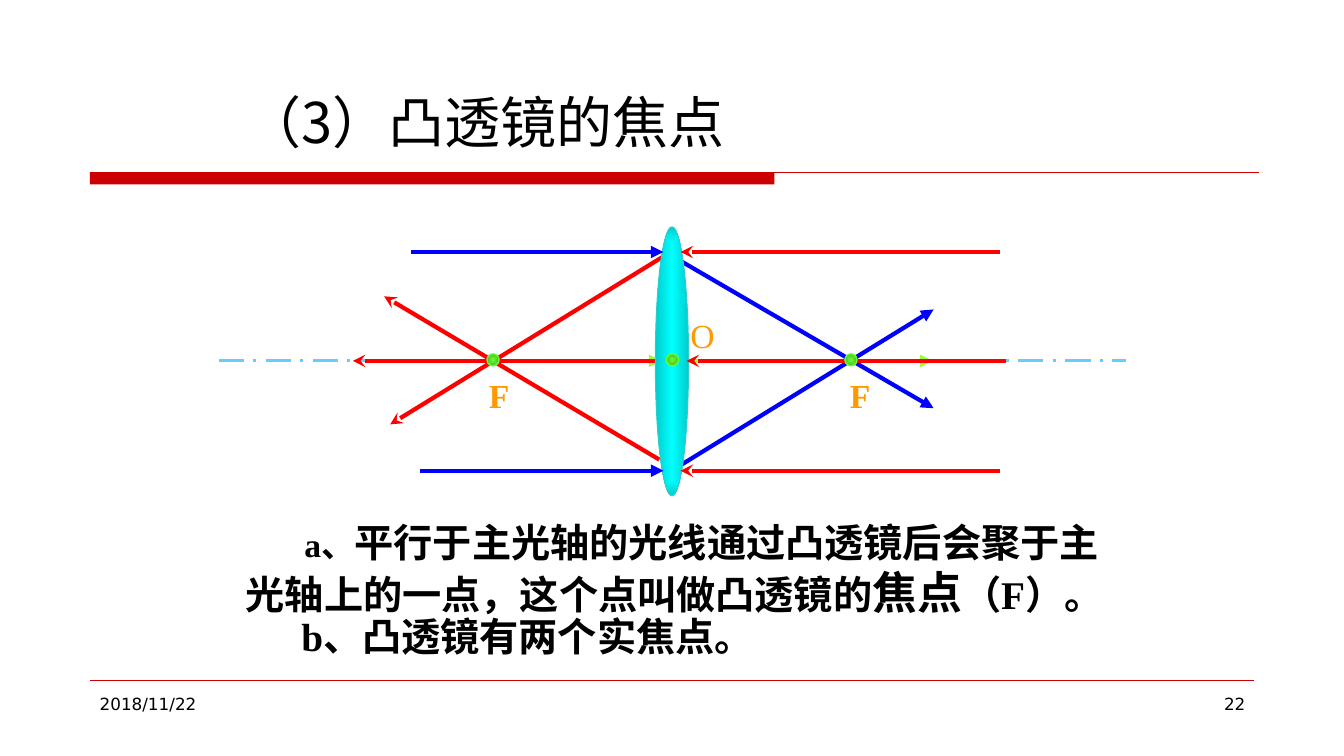
"""Slide on the focal points of a convex lens."""
from lxml.etree import SubElement
from pptx import Presentation
from pptx.dml.color import RGBColor
from pptx.enum.dml import MSO_LINE as DASH
from pptx.enum.shapes import MSO_CONNECTOR as CON, MSO_SHAPE as SHAPE
from pptx.enum.text import MSO_ANCHOR as ANCHOR, PP_ALIGN as ALIGN
from pptx.oxml.ns import qn
from pptx.util import Pt

PX = 9144
BLACK = RGBColor(0, 0, 0)
CRIMSON = RGBColor(0xCC, 0, 0)
RED = RGBColor(0xFF, 0, 0)
BLUE = RGBColor(0, 0, 0xFF)
SKY = RGBColor(0x66, 0xCC, 0xFF)
LIME = RGBColor(0x99, 0xFF, 0x33)
ORANGE = RGBColor(0xFF, 0x99, 0)
CYAN = RGBColor(0, 0xFF, 0xFF)
TEAL = RGBColor(0, 0xCC, 0xCC)
RIM = RGBColor(0x33, 0xCC, 0xCC)
GREEN = RGBColor(0x66, 0xFF, 0x33)
MOSS = RGBColor(0x49, 0xB6, 0x24)
SERIF, SANS, HAN = "Times New Roman", "DejaVu Sans", "Noto Sans CJK SC"

deck = Presentation()
deck.slide_width, deck.slide_height = 1333 * PX, 750 * PX
slide = deck.slides.add_slide(deck.slide_layouts[6])
shapes = slide.shapes


def write(box, paras, font=SERIF, color=BLACK, bold=False,
          align=ALIGN.LEFT, anchor=ANCHOR.TOP, wrap=True, indent=0):
    """Add a text box; each paragraph is a list of (text, size) runs."""
    frame = shapes.add_textbox(*[n * PX for n in box]).text_frame
    frame.word_wrap, frame.vertical_anchor = wrap, anchor
    for i, runs in enumerate(paras):
        para = frame.add_paragraph() if i else frame.paragraphs[0]
        para.alignment = align
        if indent and not i:
            para._p.get_or_add_pPr().set("indent", str(indent * PX))
        for text, size in runs:
            run = para.add_run()
            run.text = text
            face = run.font
            face.name, face.size, face.bold = font, Pt(size), bold
            face.color.rgb = color
            SubElement(run._r.rPr, qn("a:ea"), typeface=HAN)


def draw(ends, color, width=3, tip=None, dash=None):
    """Draw a straight line, with an arrowhead if a tip is named."""
    line = shapes.add_connector(CON.STRAIGHT, *[n * PX for n in ends])
    line.line.color.rgb, line.line.width = color, Pt(width)
    if dash:
        line.line.dash_style = dash
    if tip:
        SubElement(line.line._get_or_add_ln(), qn("a:tailEnd"), type=tip)
    SubElement(line._element.spPr, qn("a:effectLst"))


bar = shapes.add_shape(SHAPE.RECTANGLE, 89 * PX, 171 * PX, 679 * PX, 12 * PX)
bar.shadow.inherit = False
bar.fill.solid()
bar.fill.fore_color.rgb = CRIMSON
bar.line.fill.background()
draw((89, 171, 1249, 171), CRIMSON, 0.75)
draw((89, 675, 1244, 675), CRIMSON, 0.25)
write((89, 683, 289, 52), [[("2018/11/22", 12)]], font=SANS)
write((956, 683, 289, 52), [[("22", 12)]], font=SANS, align=ALIGN.RIGHT)
write((234, 36, 827, 122), [[("（3）凸透镜的焦点", 40)]],
      font=HAN, anchor=ANCHOR.BOTTOM)

AXIS, TOP, LOW = 358, 250, 467
draw((217, AXIS, 1117, AXIS), SKY, 2.25, dash=DASH.LONG_DASH_DOT)
behind = [
    ((675, AXIS, 925, AXIS), LIME, "triangle"),
    ((398, AXIS, 656, AXIS), LIME, "triangle"),
    ((667, AXIS, 350, AXIS), RED, "stealth"),
    ((654, 456, 381, 294), RED, "stealth"),
    ((657, 255, 387, 421), RED, "stealth"),
    ((658, 249, 926, 405), BLUE, "triangle"),
    ((658, 472, 926, 307), BLUE, "triangle"),
]
front = [
    ((408, TOP, 658, TOP), BLUE, "triangle"),
    ((417, LOW, 658, LOW), BLUE, "triangle"),
    ((998, AXIS, 681, AXIS), RED, "stealth"),
    ((992, TOP, 675, TOP), RED, "stealth"),
    ((992, LOW, 675, LOW), RED, "stealth"),
]
lens = [((650, 225, 33, 267), CYAN, TEAL, RIM, 0.75)]
dots = [((x, 351, 12, 12), GREEN, MOSS, GREEN, 1) for x in (483, 661, 838)]

for rays, ovals in ((behind, lens), (front, dots)):
    for ends, color, tip in rays:
        draw(ends, color, tip=tip)
    for box, core, edge, rim, width in ovals:
        oval = shapes.add_shape(SHAPE.OVAL, *[n * PX for n in box])
        oval.shadow.inherit = False
        oval.line.color.rgb, oval.line.width = rim, Pt(width)
        oval.fill.gradient()
        for stop, color in zip(oval.fill.gradient_stops, (core, edge)):
            stop.color.rgb = color
        grad = oval._element.spPr.find(qn("a:gradFill"))
        grad.remove(grad.find(qn("a:lin")))
        glow = SubElement(grad, qn("a:path"), {"path": "shape"})
        SubElement(glow, qn("a:fillToRect"),
                   {side: "50000" for side in "ltrb"})

write((675, 308, 50, 50), [[("O", 24)]], color=ORANGE)
for x, width in ((475, 40), (833, 67)):
    write((x, 367, width, 50), [[("F", 24)]], color=ORANGE, bold=True)

write((289, 603, 477, 57), [[("b、凸透镜有两个实焦点。", 28)]], bold=True)
write((234, 509, 906, 110), [
    [("a、", 24), ("平行于主光轴的光线通过凸透镜后会聚于主", 28)],
    [("光轴上的一点，这个点叫做凸透镜的", 28), ("焦点", 32), ("（F）。", 28)],
], bold=True, indent=58)

deck.save("out.pptx")
